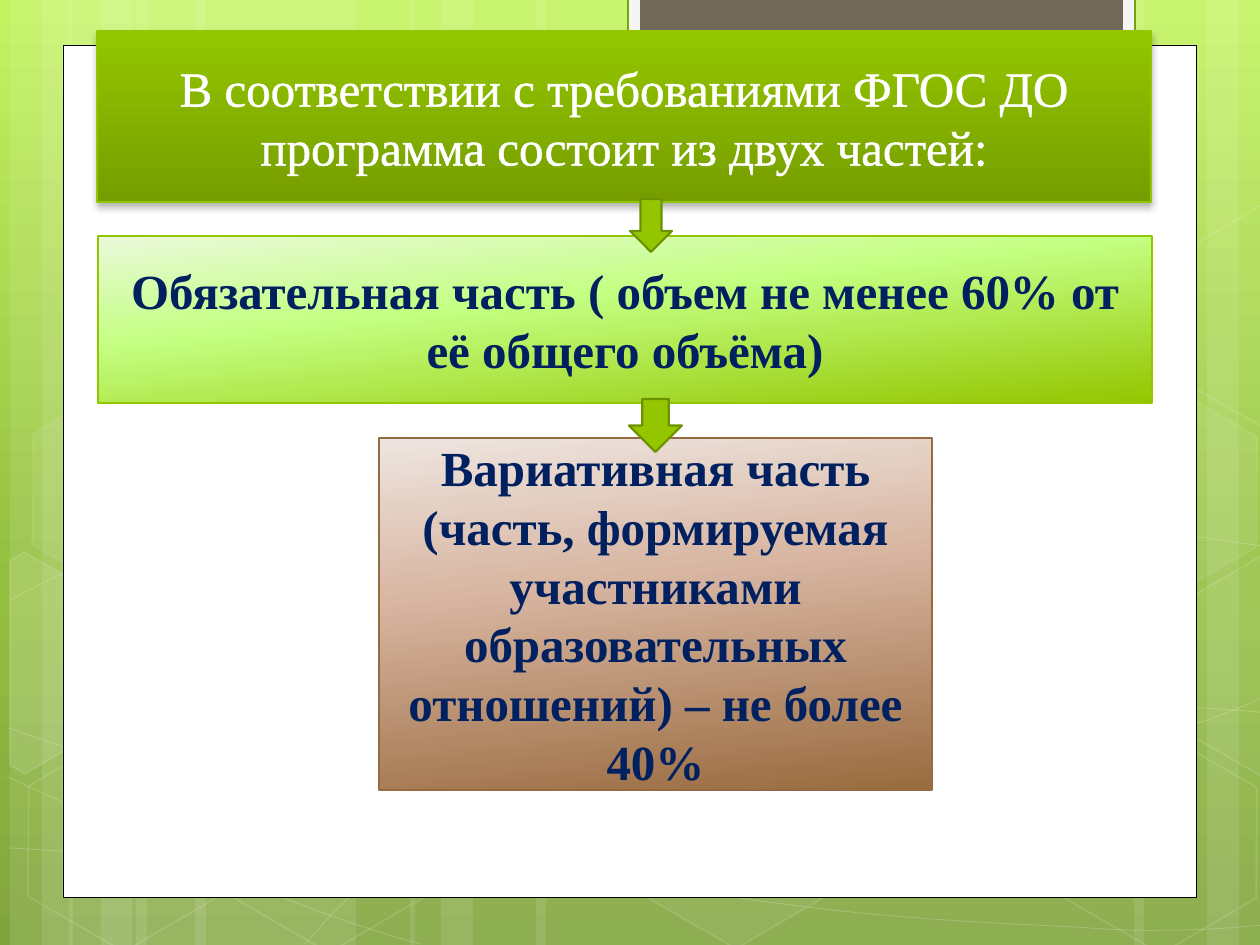
from pptx import Presentation
from pptx.dml.color import RGBColor
from pptx.enum.shapes import MSO_SHAPE
from pptx.enum.text import MSO_ANCHOR, PP_ALIGN
from pptx.oxml import parse_xml
from pptx.oxml.ns import nsdecls, qn
from pptx.util import Pt
from copy import deepcopy

PX = 914400 / 126
WHITE, NAVY, GREEN = "FFFFFF", "002060", "94C600"
SLIDE_HEIGHT = 945

# (left, width)
BANDS = [(136, 220), (10, 63), (42, 105), (195, 220), (69, 63), (101, 105),
         (924, 220), (1207, 63), (1134, 105), (536, 388), (410, 63), (441, 105)]

# Start point, then three points for each cubic segment
CURVES = [
    [(9, 848), (77, 852), (145, 856), (239, 854), (334, 853), (451, 851), (577, 838),
     (703, 825), (882, 801), (998, 777), (1113, 753), (1231, 716), (1269, 694)],
    [(9, 601), (45, 581), (82, 562), (152, 543), (224, 522), (326, 496), (437, 488),
     (549, 479), (685, 478), (824, 488), (963, 498), (1193, 537), (1269, 547)],
    [(8, 777), (160, 847), (311, 916), (421, 944)],
    [(9, 728), (48, 742), (88, 756), (161, 776), (235, 795), (344, 827), (450, 848),
     (554, 869), (687, 892), (791, 905), (896, 919), (1008, 924), (1075, 927),
     (1140, 932), (1158, 930), (1191, 930), (1223, 929), (1246, 926), (1269, 925)],
    [(305, 944), (328, 918), (350, 893), (381, 871), (411, 848), (454, 823), (489, 805),
     (524, 787), (546, 780), (592, 767), (638, 755), (722, 737), (766, 728),
     (811, 719), (818, 719), (857, 717), (896, 713), (958, 709), (1000, 708),
     (1045, 707), (1116, 708), (1116, 708), (1144, 708), (1173, 708), (1201, 708),
     (1223, 709), (1245, 711), (1256, 712), (1268, 713), (1264, 712), (1268, 713)],
]

# (left, top, fill opacity, line opacity)
HEXAGONS = [(421, 45, 4, 8), (626, 742, 6, 12), (14, 745, 0, 12), (18, 393, 7, 8),
            (219, 746, 0, 12), (949, 571, 10, 12), (1051, 747, 0, 12), (1051, 396, 7, 8)]

# (points, fill opacity)
CUT_HEXAGONS = [
    ([(10, 561), (24, 552), (121, 607), (120, 718), (25, 774), (10, 765)], 10),
    ([(1167, 611), (1261, 556), (1271, 562), (1271, 772), (1263, 777), (1167, 722)], 4),
    ([(1167, 261), (1261, 205), (1273, 212), (1271, 422), (1263, 427), (1167, 372)], 0),
]


def px(value):
    return round(value * PX)


def rgb(code):
    return RGBColor.from_string(code)


def paint(fill, owner, color, opacity=100):
    """Solid fill; the fill of a shape must be painted before its line."""
    if not color or not opacity:
        fill.background()
        return
    fill.solid()
    fill.fore_color.rgb = rgb(color)
    if opacity < 100:
        newest = list(owner.element.iter(qn("a:srgbClr")))[-1]
        newest.append(parse_xml(f'<a:alpha {nsdecls("a")} val="{opacity * 1000}"/>'))


def paint_gradient(fill, owner, stops, angle):
    fill.gradient()
    fill.gradient_angle = 360 - angle
    stop_list = next(owner.element.iter(qn("a:gsLst")))
    for _ in stops[2:]:
        stop_list.append(deepcopy(stop_list[-1]))
    for stop, (position, color) in zip(fill.gradient_stops, stops):
        stop.position = position / 100
        stop.color.rgb = rgb(color)


def style(shape, color=None, opacity=100, line=None, width=1, line_opacity=100):
    shape.shadow.inherit = False
    paint(shape.fill, shape, color, opacity)
    paint(shape.line.fill, shape, line, line_opacity)
    if line:
        shape.line.width = Pt(width)
    return shape


def add_block(slide, box, kind=MSO_SHAPE.RECTANGLE, **look):
    return style(slide.shapes.add_shape(kind, *map(px, box)), **look)


def add_outline(slide, points, close, **look):
    builder = slide.shapes.build_freeform(*points[0], scale=PX)
    builder.add_line_segments(points[1:], close=close)
    return style(builder.convert_to_shape(), **look)


def add_curve(slide, points, **look):
    """Open outline whose points after the first are taken by threes as cubic segments."""
    curve = add_outline(slide, points, False, **look)
    outline = next(curve.element.iter(qn("a:path")))
    legs = outline.findall(qn("a:lnTo"))
    for i in range(0, len(legs), 3):
        cubic = parse_xml(f'<a:cubicBezTo {nsdecls("a")}/>')
        for leg in legs[i:i + 3]:
            cubic.append(leg[0])
            outline.remove(leg)
        outline.append(cubic)


def add_panel(slide, box, text, stops, angle, line, color=NAVY, bold=True):
    panel = add_block(slide, box, line=line, width=0.75)
    paint_gradient(panel.fill, panel, stops, angle)
    frame = panel.text_frame
    frame.word_wrap = True
    frame.vertical_anchor = MSO_ANCHOR.MIDDLE
    paragraph = frame.paragraphs[0]
    paragraph.text = text
    paragraph.alignment = PP_ALIGN.CENTER
    font = paragraph.font
    font.name, font.size, font.bold = "Times New Roman", Pt(28), bold
    font.color.rgb = rgb(color)
    return panel


def add_drop_shadow(shape):
    effects = shape.element.spPr.find(qn("a:effectLst"))
    effects.append(parse_xml(
        f'<a:outerShdw {nsdecls("a")} blurRad="{Pt(4)}" dist="{Pt(2)}" dir="5400000" '
        'rotWithShape="0"><a:srgbClr val="000000"><a:alpha val="28000"/></a:srgbClr>'
        '</a:outerShdw>'))


def outline_text(shape, color, width):
    run = next(shape.element.iter(qn("a:r")))
    run.get_or_add_rPr().insert(0, parse_xml(
        f'<a:ln {nsdecls("a")} w="{Pt(width)}"><a:solidFill><a:srgbClr val="{color}"/>'
        '</a:solidFill></a:ln>'))


def add_backdrop(slide):
    paint_gradient(slide.background.fill, slide,
                   [(0, "C3F35F"), (62, "93BF3F"), (100, "81A53E")], 90)
    for left, width in BANDS:
        add_block(slide, (left, 0, width, SLIDE_HEIGHT), color=WHITE, opacity=10)
    for points in CURVES:
        add_curve(slide, points, line=WHITE, width=0.5, line_opacity=20)
    for left, top, opacity, line_opacity in HEXAGONS:
        hexagon = add_block(slide, (left, top, 220, 192), MSO_SHAPE.HEXAGON, color=WHITE,
                            opacity=opacity, line=WHITE, line_opacity=line_opacity)
        hexagon.adjustments[0] = 0.285
        hexagon.rotation = 30
    for points, opacity in CUT_HEXAGONS:
        add_outline(slide, points, True, color=WHITE, opacity=opacity,
                    line=WHITE, line_opacity=12)
    add_block(slide, (63, 45, 1134, 853), color=WHITE, line="000000", width=0.5)
    add_block(slide, (628, -3, 507, 96), color="F5F5F5", line="74A510", width=1.25)
    add_block(slide, (640, -3, 483, 86), color="71685A")


def main():
    presentation = Presentation()
    presentation.slide_width, presentation.slide_height = px(1260), px(SLIDE_HEIGHT)
    slide = presentation.slides.add_slide(presentation.slide_layouts[6])
    add_backdrop(slide)

    heading = add_panel(
        slide, (97, 31, 1054, 171),
        "В соответствии с требованиями ФГОС ДО программа состоит из двух частей:",
        [(0, GREEN), (100, "769D00")], 90, GREEN, color=WHITE, bold=False)
    add_drop_shadow(heading)
    outline_text(heading, WHITE, 1.45)
    add_panel(slide, (98, 236, 1054, 167),
              "Обязательная часть ( объем не менее 60% от её общего объёма)",
              [(0, "EAF9DA"), (40, "C4FF82"), (100, GREEN)], 84, GREEN)
    add_panel(slide, (379, 438, 553, 352),
              "Вариативная часть (часть, формируемая участниками образовательных "
              "отношений) – не более 40%",
              [(0, "EEE5E0"), (40, "D8B6A2"), (100, "996B3F")], 84, "956B43")
    for box in [(630, 199, 42, 53), (629, 399, 53, 53)]:
        add_block(slide, box, MSO_SHAPE.DOWN_ARROW, color=GREEN, line="6D9200", width=1.25)
    presentation.save("out.pptx")


if __name__ == "__main__":
    main()
